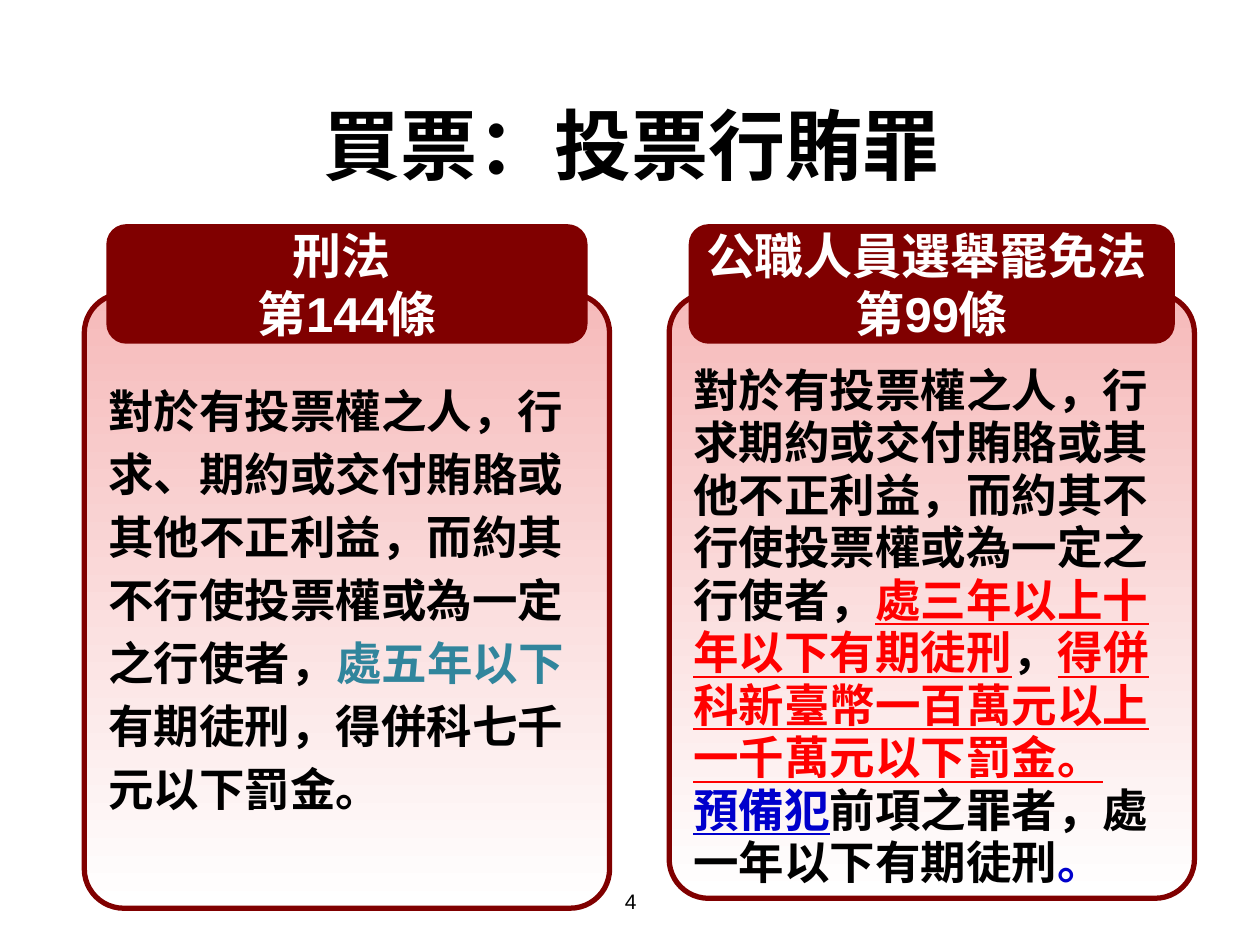
from pptx import Presentation
from pptx.dml.color import RGBColor
from pptx.enum.shapes import MSO_SHAPE as Shape
from pptx.enum.text import MSO_ANCHOR as Anchor, MSO_AUTO_SIZE as AutoSize, PP_ALIGN as Align
from pptx.util import Cm, Pt

MAROON, PINK, WHITE, BLACK = "800000", "F6BABA", "FFFFFF", "000000"
TEAL, RED, BLUE = "31859C", "FF0000", "0000CC"
HEADER_HEIGHT, CARD_DROP, CARD_RADIUS = 2.41, 1.4, 0.075

STATUTES = [
    {
        "box": (1.7, 4.52, 10.59, 13.79),
        "header_width": 9.7,
        "heading": ["刑法 ", "第144條"],
        "leading": 36,
        "body": [[
            ("對於有投票權之人，行求、期約或交付賄賂或其他不正利益，而約其不行使投票權或為一定之行使者，", BLACK, False),
            ("處五年以下", TEAL, False),
            ("有期徒刑，得併科七千元以下罰金。", BLACK, False),
        ]],
    },
    {
        "box": (13.49, 4.52, 10.59, 13.59),
        "header_width": 9.8,
        "heading": ["公職人員選舉罷免法 ", "第99條"],
        "leading": 30,
        "body": [
            [
                ("對於有投票權之人，行求期約或交付賄賂或其他不正利益，而約其不行使投票權或為一定之行使者，", BLACK, False),
                ("處三年以上十年以下有期徒刑", RED, True),
                ("，", BLACK, False),
                ("得併科新臺幣一百萬元以上一千萬元以下罰金。", RED, True),
            ],
            [
                ("預備犯", BLUE, True),
                ("前項之罪者，處一年以下有期徒刑", BLACK, False),
                ("。", BLUE, False),
            ],
        ],
    },
]


def rgb(value):
    """Turn a hex string into a colour."""
    return RGBColor.from_string(value)


def apply(target, formats):
    """Set each attribute named in formats on the target."""
    for name, value in formats.items():
        setattr(target, name, value)


def write(frame, paragraphs, size, bold=True, **layout):
    """Fill a text frame with paragraphs of (text, colour, underline) runs."""
    for index, pieces in enumerate(paragraphs):
        paragraph = frame.add_paragraph() if index else frame.paragraphs[0]
        apply(paragraph, layout)
        for text, colour, underline in pieces:
            run = paragraph.add_run()
            run.text = text
            apply(run.font, {"name": "Arial", "size": Pt(size), "bold": bold, "underline": underline})
            run.font.color.rgb = rgb(colour)


def add_title(slide, box, text):
    """Place the slide title in its placeholder."""
    title = slide.shapes.title
    apply(title, dict(zip(("left", "top", "width", "height"), map(Cm, box))))
    apply(title.text_frame, {"auto_size": AutoSize.NONE, "vertical_anchor": Anchor.MIDDLE})
    write(title.text_frame, [[(text, BLACK, False)]], 44, alignment=Align.CENTER)


def add_page_number(slide, box, number):
    """Place the page number in a centred text box."""
    frame = slide.shapes.add_textbox(*map(Cm, box)).text_frame
    apply(frame, {"word_wrap": True, "vertical_anchor": Anchor.MIDDLE})
    write(frame, [[(number, BLACK, False)]], 12, bold=False, alignment=Align.CENTER)


def add_statute(slide, box, header_width, heading, leading, body):
    """Draw a statute: a shaded card with its heading tab on top."""
    left, top, width, height = box
    shapes = slide.shapes.add_group_shape().shapes

    card = shapes.add_shape(Shape.ROUNDED_RECTANGLE, Cm(left), Cm(top + CARD_DROP),
                            Cm(width), Cm(height - CARD_DROP))
    card.shadow.inherit = False
    card.adjustments[0] = CARD_RADIUS
    card.fill.gradient()
    card.fill.gradient_angle = 270
    for stop, colour in zip(card.fill.gradient_stops, (PINK, WHITE)):
        stop.color.rgb = rgb(colour)
    card.line.color.rgb = rgb(MAROON)
    card.line.width = Pt(3)
    apply(card.text_frame, {"word_wrap": True, "vertical_anchor": Anchor.TOP,
                            "margin_top": Cm(0.13) + Pt(leading)})
    write(card.text_frame, body, 26, alignment=Align.LEFT, line_spacing=Pt(leading))

    header = shapes.add_shape(Shape.ROUNDED_RECTANGLE, Cm(left + (width - header_width) / 2),
                              Cm(top), Cm(header_width), Cm(HEADER_HEIGHT))
    header.shadow.inherit = False
    header.fill.solid()
    header.fill.fore_color.rgb = rgb(MAROON)
    header.line.fill.background()
    apply(header.text_frame, {"word_wrap": False, "vertical_anchor": Anchor.MIDDLE})
    write(header.text_frame, [[(line, WHITE, False)] for line in heading], 28, alignment=Align.CENTER)


def main():
    """Build and save the slide."""
    deck = Presentation()
    apply(deck, {"slide_width": Cm(25.4), "slide_height": Cm(19.05)})
    slide = deck.slides.add_slide(deck.slide_layouts[5])
    add_title(slide, (1.3, 1.52, 22.86, 2.77), "買票：投票行賄罪")
    add_page_number(slide, (8.69, 17.65, 8.05, 1.02), "4")
    for statute in STATUTES:
        add_statute(slide, **statute)
    deck.save("out.pptx")


if __name__ == "__main__":
    main()
